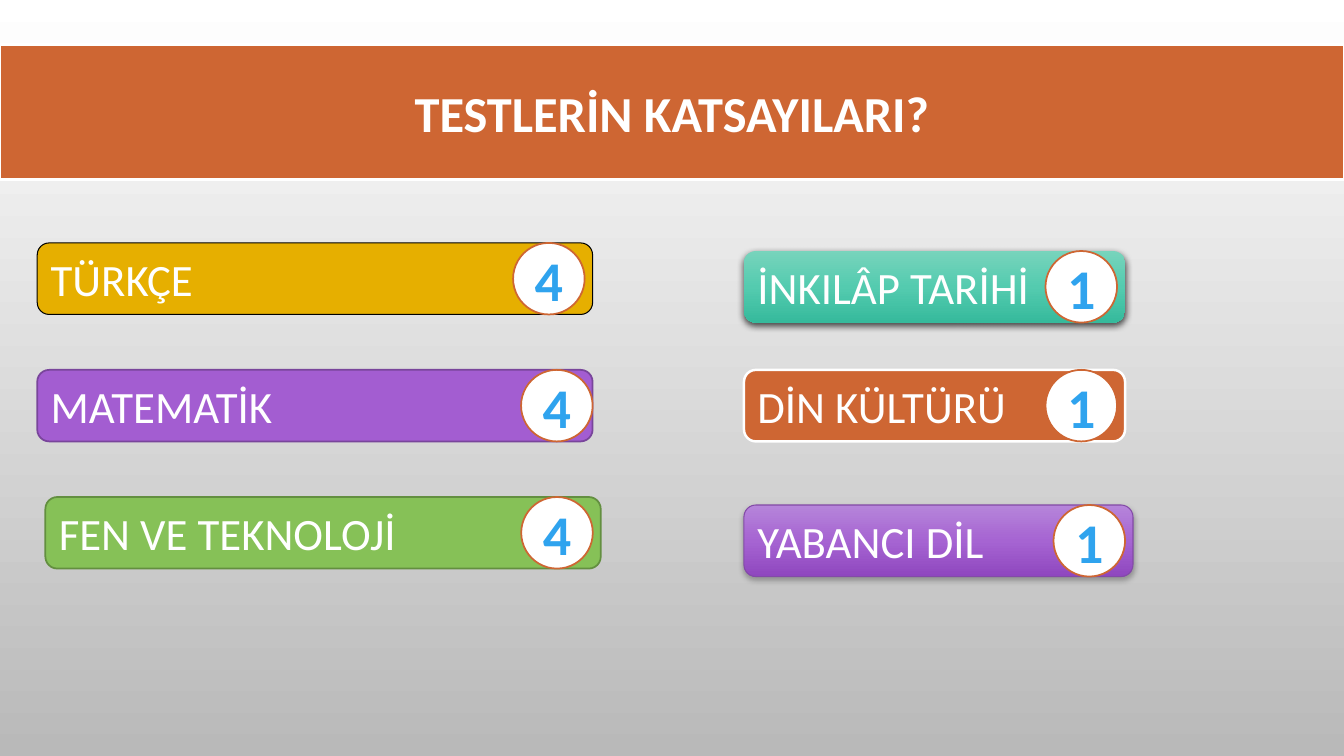
from lxml.etree import SubElement
from pptx import Presentation
from pptx.dml.color import RGBColor
from pptx.enum.shapes import MSO_SHAPE
from pptx.enum.text import MSO_ANCHOR, PP_ALIGN
from pptx.oxml.ns import qn
from pptx.util import Pt

COLORS = {
    "white": "FFFFFF", "gray": "B9B9B9", "black": "000000", "orange": "CE6633",
    "blue": "2FA3EE", "gold": "E6AF00", "purple": "A35DD1", "purple line": "79459B",
    "green": "86C157", "green line": "638F40",
    "teal light": "77D4BC", "teal": "54CBAF", "teal dark": "36BA9C",
    "violet light": "B685DA", "violet": "A664D2", "violet dark": "8F47BF",
    "violet line": "834AA7",
}
BAR_HEIGHT = 51.1
BADGE_GAP = 5.7


class SlideBuilder:
    """Draws styled elements on the current slide, with lengths in points."""

    def __init__(self, slide, font_name):
        self.slide = slide
        self.font_name = font_name

    def color(self, name):
        return RGBColor.from_string(COLORS[name])

    def gradient(self, fill, element, names):
        fill.gradient()
        fill.gradient_angle = 270
        stops = element.xpath(".//a:gsLst")[0]
        for stop in list(stops):
            stops.remove(stop)
        for index, name in enumerate(names):
            position = 100000 * index // (len(names) - 1)
            stop = SubElement(stops, qn("a:gs"), pos=str(position))
            SubElement(stop, qn("a:srgbClr"), val=COLORS[name])

    def background(self, names):
        self.gradient(self.slide.background.fill, self.slide.element, names)

    def shadow(self, shape, opacity, blur):
        effects = shape.element.spPr.find(qn("a:effectLst"))
        shadow = SubElement(effects, qn("a:outerShdw"), blurRad=str(Pt(blur)),
                            dist=str(Pt(2)), dir="5400000", rotWithShape="0")
        color = SubElement(shadow, qn("a:srgbClr"), val=COLORS["black"])
        SubElement(color, qn("a:alpha"), val=str(opacity * 1000))

    def shape(self, kind, box, fill, line):
        shape = self.slide.shapes.add_shape(kind, *(Pt(length) for length in box))
        shape.shadow.inherit = False
        if isinstance(fill, tuple):
            self.gradient(shape.fill, shape.element, fill)
        else:
            shape.fill.solid()
            shape.fill.fore_color.rgb = self.color(fill)
        if line:
            name, width = line
            shape.line.color.rgb = self.color(name)
            shape.line.width = Pt(width)
        else:
            shape.line.fill.background()
        return shape

    def text(self, shape, text, size, color="white", bold=False, align=PP_ALIGN.LEFT):
        frame = shape.text_frame
        frame.word_wrap = True
        frame.vertical_anchor = MSO_ANCHOR.MIDDLE
        paragraph = frame.paragraphs[0]
        paragraph.alignment = align
        run = paragraph.add_run()
        run.text = text
        run.font.name = self.font_name
        run.font.size = Pt(size)
        run.font.bold = bold
        run.font.color.rgb = self.color(color)

    def title(self, text):
        banner = self.shape(MSO_SHAPE.RECTANGLE, (0, 31.7, 960, 96.5),
                            "orange", ("white", 1.75))
        self.text(banner, text, 36, bold=True, align=PP_ALIGN.CENTER)

    def bar(self, label, left, top, width, fill, line, shadow=None):
        bar = self.shape(MSO_SHAPE.FLOWCHART_ALTERNATE_PROCESS,
                         (left, top, width, BAR_HEIGHT), fill, line)
        if shadow:
            self.shadow(bar, *shadow)
        self.text(bar, label, 32)

    def badge(self, number, right, top):
        badge = self.shape(MSO_SHAPE.OVAL,
                           (right - BAR_HEIGHT, top, BAR_HEIGHT, BAR_HEIGHT),
                           "white", ("orange", 1.25))
        self.text(badge, number, 40, "blue", True, PP_ALIGN.CENTER)


def main():
    presentation = Presentation()
    presentation.slide_width, presentation.slide_height = Pt(960), Pt(540)
    slide = presentation.slides.add_slide(presentation.slide_layouts[6])
    builder = SlideBuilder(slide, "Calibri")
    builder.background(("white", "gray"))
    builder.title("TESTLERİN KATSAYILARI?")

    teal = ("teal light", "teal", "teal dark")
    violet = ("violet light", "violet", "violet dark")
    tests = [
        ("TÜRKÇE", "4", BADGE_GAP, 26.6, 173.5, 396.7, "gold", ("black", 0.75), None),
        ("MATEMATİK", "4", 0, 26.6, 264.2, 396.7, "purple", ("purple line", 1.25), None),
        ("FEN VE TEKNOLOJİ", "4", BADGE_GAP, 32.4, 355, 396.7, "green",
         ("green line", 1.25), None),
        ("İNKILÂP TARİHİ", "1", BADGE_GAP, 531.4, 179.3, 272.2, teal, None, (69, 5)),
        ("DİN KÜLTÜRÜ", "1", BADGE_GAP, 531.4, 264.2, 272.2, "orange",
         ("white", 1.75), None),
        ("YABANCI DİL", "1", BADGE_GAP, 531.4, 360.7, 277.9, violet,
         ("violet line", 0.75), (28, 4)),
    ]
    for label, number, gap, left, top, width, fill, line, shadow in tests:
        builder.bar(label, left, top, width, fill, line, shadow)
        builder.badge(number, left + width - gap, top)

    presentation.save("out.pptx")


if __name__ == "__main__":
    main()
